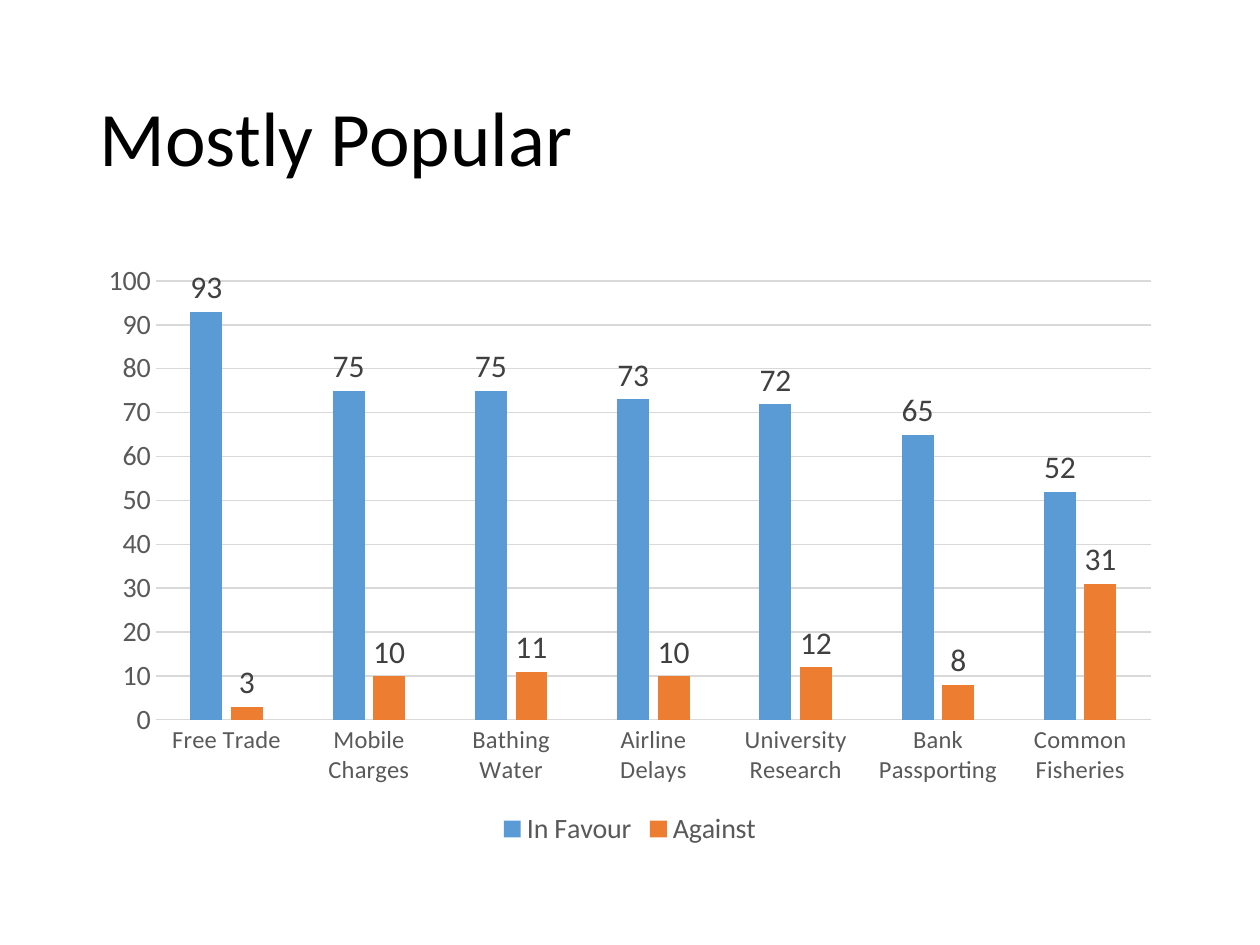
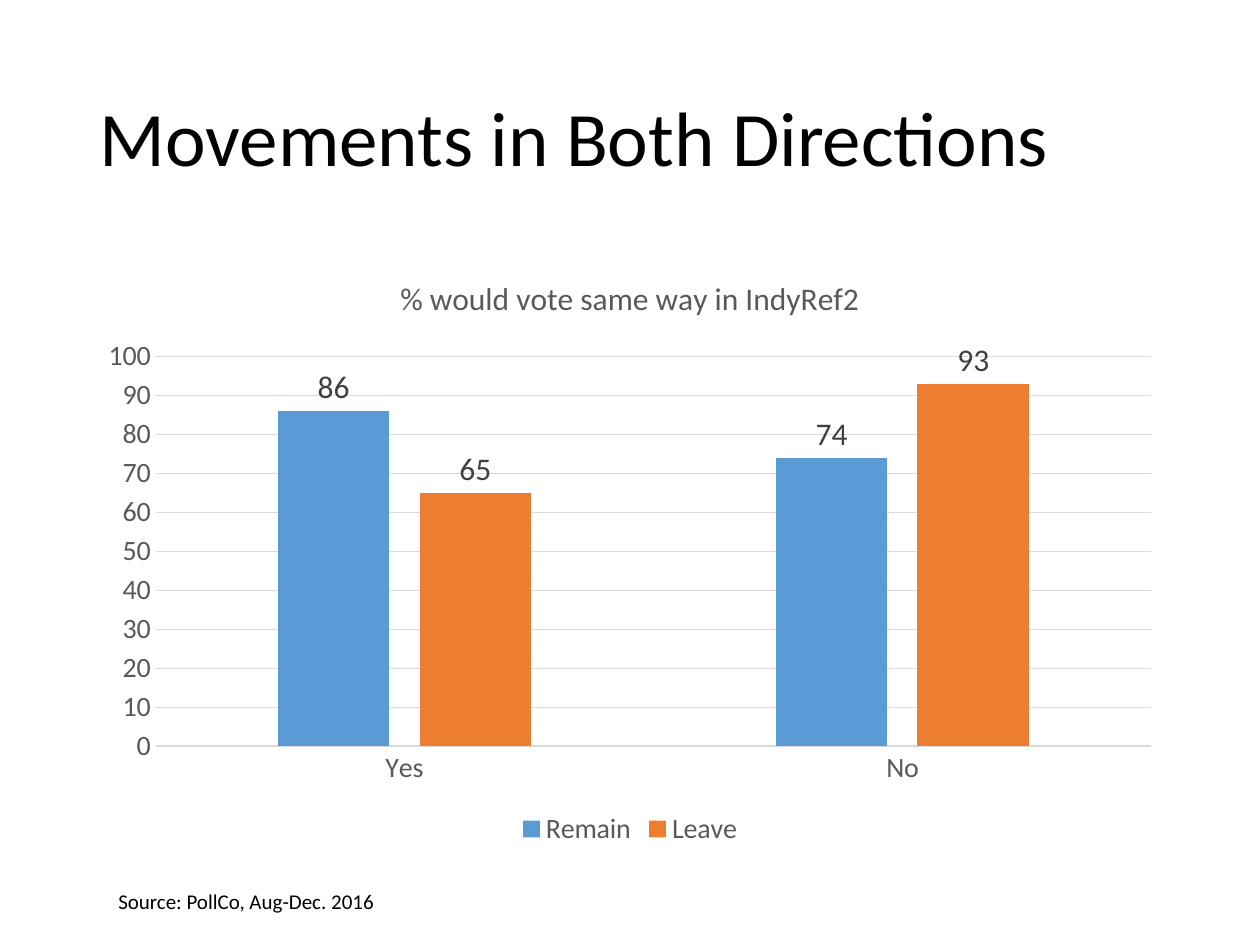
from dataclasses import dataclass

from pptx import Presentation
from pptx.chart.data import CategoryChartData
from pptx.dml.color import RGBColor
from pptx.enum.chart import XL_CHART_TYPE, XL_LABEL_POSITION, XL_LEGEND_POSITION, XL_TICK_MARK
from pptx.enum.text import MSO_ANCHOR, PP_ALIGN
from pptx.util import Inches, Pt


@dataclass(frozen=True)
class Theme:
    font: str = "Calibri"
    ink: str = "000000"
    axis_text: str = "595959"
    label_text: str = "404040"
    rule: str = "D9D9D9"
    paper: str = "FFFFFF"
    bars: tuple = ("5B9BD5", "ED7D31")
    title_size: int = 44
    label_size: int = 18
    axis_size: int = 16
    small_axis_size: int = 14
    source_size: int = 12
    rule_width: float = 0.75


@dataclass(frozen=True)
class Box:
    left: float
    top: float
    width: float
    height: float

    def lengths(self):
        return [Inches(side) for side in (self.left, self.top, self.width, self.height)]


THEME = Theme()
PAGE_WIDTH, PAGE_HEIGHT = 10, 7.5
MARGIN = 0.69
CONTENT_WIDTH = PAGE_WIDTH - 2 * MARGIN
TITLE_BOX = Box(MARGIN, 0.4, CONTENT_WIDTH, 1.45)
CHART_BOX = Box(MARGIN, 2, CONTENT_WIDTH, 4.76)
SOURCE_BOX = Box(MARGIN + 0.15, 7, 6.59, 0.3)


def style_font(font, size, color):
    font.name = THEME.font
    font.size = Pt(size)
    font.bold = False
    font.color.rgb = RGBColor.from_string(color)


def style_rule(line):
    line.color.rgb = RGBColor.from_string(THEME.rule)
    line.width = Pt(THEME.rule_width)


def place_title(page, box, text):
    title = page.shapes.title
    title.left, title.top, title.width, title.height = box.lengths()
    frame = title.text_frame
    frame.text = text
    frame.word_wrap = True
    frame.vertical_anchor = MSO_ANCHOR.MIDDLE
    para = frame.paragraphs[0]
    para.alignment = PP_ALIGN.LEFT
    para.line_spacing = 0.9
    style_font(para.font, THEME.title_size, THEME.ink)


def style_axes(chart, category_size):
    categories, values = chart.category_axis, chart.value_axis
    for axis, size in ((categories, category_size), (values, THEME.axis_size)):
        axis.major_tick_mark = axis.minor_tick_mark = XL_TICK_MARK.NONE
        style_font(axis.tick_labels.font, size, THEME.axis_text)
    style_rule(categories.format.line)
    values.format.line.fill.background()
    values.has_major_gridlines = True
    style_rule(values.major_gridlines.format.line)
    values.minimum_scale, values.maximum_scale, values.major_unit = 0, 100, 10


def style_bars(plot):
    plot.gap_width = 219
    plot.overlap = -27
    plot.vary_by_categories = False
    for series, color in zip(plot.series, THEME.bars):
        series.format.fill.solid()
        series.format.fill.fore_color.rgb = RGBColor.from_string(color)
        labels = series.data_labels
        labels.show_value = True
        labels.position = XL_LABEL_POSITION.OUTSIDE_END
        style_font(labels.font, THEME.label_size, THEME.label_text)


def place_chart(page, box, categories, answers, heading=None, category_size=THEME.axis_size):
    data = CategoryChartData()
    data.categories = categories
    for name, values in answers.items():
        data.add_series(name, values)
    chart = page.shapes.add_chart(XL_CHART_TYPE.COLUMN_CLUSTERED, *box.lengths(), data).chart
    style_font(chart.font, 10, THEME.ink)

    # Heading and legend
    chart.has_title = heading is not None
    if heading:
        frame = chart.chart_title.text_frame
        frame.text = heading
        style_font(frame.paragraphs[0].font, THEME.label_size, THEME.axis_text)
        chart.chart_title.include_in_layout = False
    chart.has_legend = True
    chart.legend.position = XL_LEGEND_POSITION.BOTTOM
    chart.legend.include_in_layout = False
    style_font(chart.legend.font, THEME.axis_size, THEME.axis_text)

    style_axes(chart, category_size)
    style_bars(chart.plots[0])


def place_source(page, box, text):
    frame = page.shapes.add_textbox(*box.lengths()).text_frame
    frame.word_wrap = True
    frame.text = text
    style_font(frame.paragraphs[0].font, THEME.source_size, THEME.ink)


def add_chart_page(deck, title, source=None, **chart_parts):
    page = deck.slides.add_slide(deck.slide_layouts[5])
    page.background.fill.solid()
    page.background.fill.fore_color.rgb = RGBColor.from_string(THEME.paper)
    place_title(page, TITLE_BOX, title)
    place_chart(page, CHART_BOX, **chart_parts)
    if source:
        place_source(page, SOURCE_BOX, source)


def main():
    deck = Presentation()
    deck.slide_width, deck.slide_height = Inches(PAGE_WIDTH), Inches(PAGE_HEIGHT)

    # Support for each policy
    add_chart_page(
        deck,
        "Mostly Popular",
        categories=["Free Trade", "Mobile Charges", "Bathing Water", "Airline Delays",
                    "University Research", "Bank Passporting", "Common Fisheries"],
        answers={"In Favour": (93, 75, 75, 73, 72, 65, 52),
                 "Against": (3, 10, 11, 10, 12, 8, 31)},
        category_size=THEME.small_axis_size,
    )

    # Loyalty to the earlier vote
    add_chart_page(
        deck,
        "Movements in Both Directions",
        source="Source: PollCo, Aug-Dec. 2016",
        categories=["Yes", "No"],
        answers={"Remain": (86, 74), "Leave": (65, 93)},
        heading="% would vote same way in IndyRef2",
    )
    deck.save("out.pptx")


if __name__ == "__main__":
    main()
